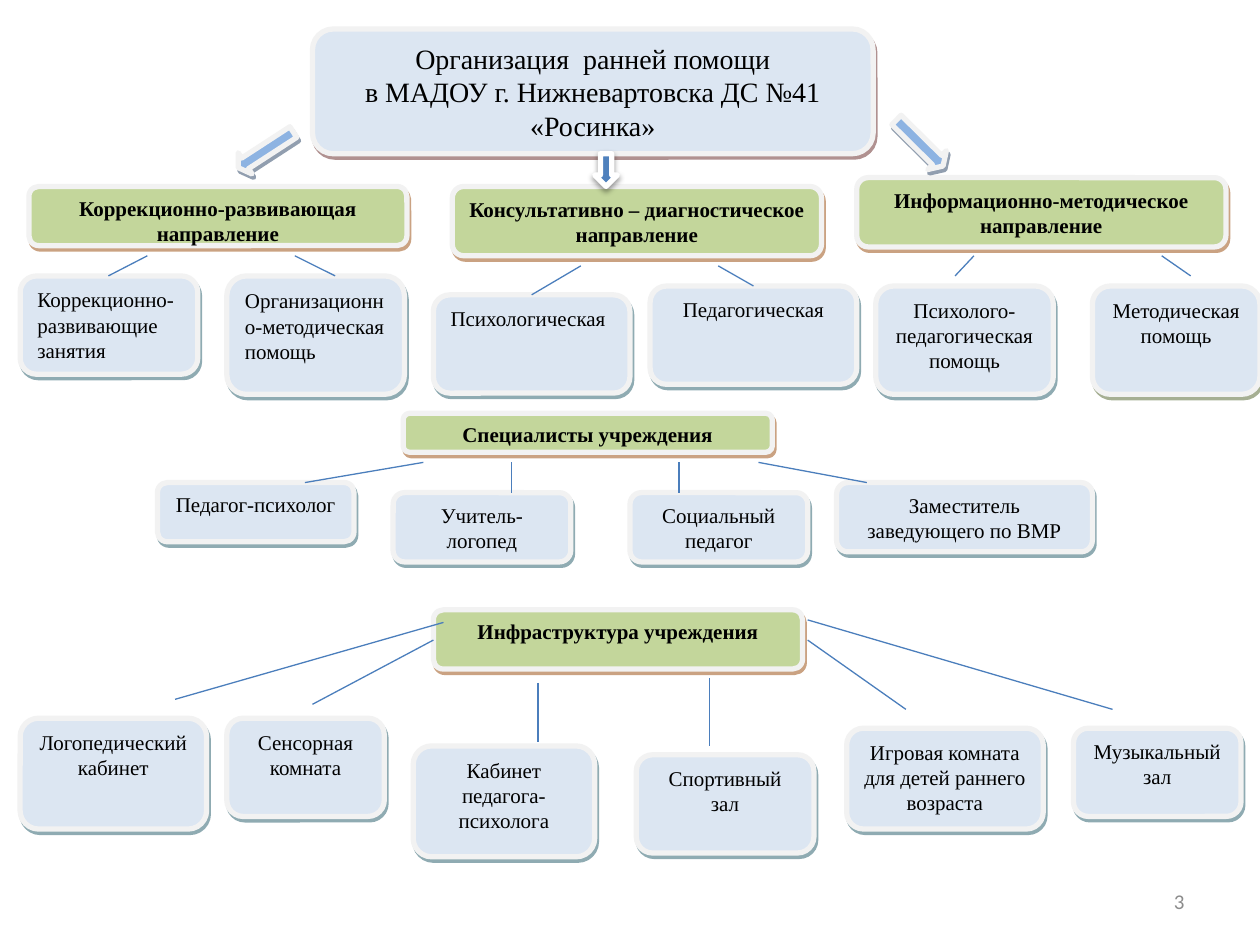
import pptx
import pptx.util
from lxml import etree
from pptx.dml.color import RGBColor
from pptx.enum.shapes import MSO_CONNECTOR, MSO_SHAPE
from pptx.enum.text import MSO_ANCHOR, PP_ALIGN
from pptx.oxml.ns import qn
from pptx.util import Inches, Pt

BLUE = RGBColor(0xDC, 0xE6, 0xF2)
GREEN = RGBColor(0xC3, 0xD6, 0x9B)
ARROW_BLUE = RGBColor(0x8D, 0xB3, 0xE2)
ACCENT = RGBColor(0x4F, 0x81, 0xBD)
LINK = RGBColor(0x4B, 0x7E, 0xBC)
FRAME = RGBColor(0xF2, 0xF2, 0xF2)
WHITE = RGBColor(0xFF, 0xFF, 0xFF)
BLACK = RGBColor(0, 0, 0)
GREY = RGBColor(0x8C, 0x8C, 0x8C)
BROWN_SHADE = RGBColor(0x62, 0x24, 0x23)
ORANGE_SHADE = RGBColor(0x97, 0x47, 0x06)
TEAL_SHADE = RGBColor(0x20, 0x58, 0x67)
OLIVE_SHADE = RGBColor(0x4E, 0x61, 0x28)
NAVY_SHADE = RGBColor(0x24, 0x3F, 0x60)

SERIF = "Times New Roman"
LEFT, CENTER = PP_ALIGN.LEFT, PP_ALIGN.CENTER

# Content: (text, (left, top, width, height)), in inches
TITLE = ("Организация  ранней помощи\nв МАДОУ г. Нижневартовска ДС №41 «Росинка»",
         (2.48, 0.23, 4.45, 0.99))
DIRECTIONS = [
    ("Коррекционно-развивающая направление", (0.23, 1.48, 3, 0.47)),
    ("Консультативно – диагностическое направление", (3.59, 1.48, 2.93, 0.55)),
    ("Информационно-методическое направление", (6.8, 1.41, 2.93, 0.55)),
]
SECTIONS = [
    ("Специалисты учреждения", (3.2, 3.28, 2.93, 0.31)),
    ("Инфраструктура учреждения", (3.44, 4.84, 2.93, 0.47)),
]
LEFT_ALIGNED_HELP = [
    ("Коррекционно-развивающие занятия", (0.16, 2.19, 1.41, 0.78)),
    ("Организационно-методическая помощь", (1.8, 2.19, 1.41, 0.94)),
    ("Психологическая", (3.44, 2.34, 1.56, 0.78)),
]
CENTERED_HELP = [
    ("Педагогическая", (5.16, 2.27, 1.64, 0.78)),
    ("Психолого-педагогическая помощь", (6.95, 2.27, 1.41, 0.86)),
]
METHOD_HELP = ("Методическая помощь", (8.67, 2.27, 1.33, 0.86))
SPECIALISTS = [
    ("Педагог-психолог", (1.25, 3.83, 1.56, 0.47)),
    ("Учитель-логопед", (3.12, 3.91, 1.41, 0.55)),
    ("Социальный педагог", (5, 3.91, 1.41, 0.55)),
    ("Заместитель заведующего по ВМР", (6.64, 3.83, 2.03, 0.55)),
]
ROOMS = [
    ("Логопедический кабинет", (0.16, 5.7, 1.48, 0.88)),
    ("Сенсорная комната", (1.8, 5.7, 1.25, 0.78)),
    ("Кабинет педагога-психолога", (3.28, 5.92, 1.44, 0.88)),
    ("Спортивный зал", (5.05, 5.99, 1.41, 0.78)),
    ("Игровая комната для детей раннего возраста", (6.72, 5.78, 1.56, 0.8)),
    ("Музыкальный зал", (8.52, 5.78, 1.33, 0.7)),
]
# Links: (x, y) of the upper end, then of the lower end
LINKS = [
    # directions to kinds of help
    (1.17, 2.03, 0.86, 2.19), (2.34, 2.03, 2.66, 2.19),
    (4.61, 2.11, 4.22, 2.34), (5.7, 2.11, 5.98, 2.27),
    (7.73, 2.03, 7.58, 2.19), (9.22, 2.03, 9.45, 2.19),
    # specialists
    (3.36, 3.67, 2.42, 3.83), (4.06, 3.67, 4.06, 3.91),
    (5.39, 3.67, 5.39, 3.91), (6.02, 3.67, 6.88, 3.83),
    # rooms
    (3.52, 4.94, 1.39, 5.55), (3.44, 5.08, 2.48, 5.59),
    (4.27, 5.42, 4.27, 5.89), (5.63, 5.38, 5.63, 5.92),
    (6.41, 5.08, 7.19, 5.63), (6.41, 4.92, 8.83, 5.63),
]
SIDE_ARROWS = [((1.85, 1.09, 0.52, 0.2), 327), ((7.04, 1.03, 0.52, 0.21), 224.7)]
DOWN_ARROW = (4.72, 1.22, 0.18, 0.26)


def add_shadow(shape, color, opacity=50, blur=0, distance=2.2, angle=63):
    shape.shadow.inherit = False
    effects = shape._element.spPr.find(qn("a:effectLst"))
    shadow = etree.SubElement(
        effects, qn("a:outerShdw"), blurRad=str(Pt(blur)), dist=str(Pt(distance)),
        dir=str(angle * 60000), algn="ctr", rotWithShape="0")
    rgb = etree.SubElement(shadow, qn("a:srgbClr"), val=str(color))
    etree.SubElement(rgb, qn("a:alpha"), val=str(opacity * 1000))


def add_figure(slide, kind, place, fill, frame=FRAME):
    shape = slide.shapes.add_shape(kind, *map(Inches, place))
    shape.fill.solid()
    shape.fill.fore_color.rgb = fill
    shape.line.color.rgb = frame
    shape.line.width = Pt(3)
    return shape


def write(shape, text, size, font, color, align, bold=False, after=0):
    text_frame = shape.text_frame
    text_frame.word_wrap = True
    text_frame.text = text
    for paragraph in text_frame.paragraphs:
        paragraph.alignment = align
        paragraph.space_after = Pt(after)
        for run in paragraph.runs:
            run.font.size = Pt(size)
            run.font.name = font
            run.font.bold = bold
            run.font.color.rgb = color


def add_box(slide, item, fill=BLUE, shade=TEAL_SHADE, align=CENTER,
            size=12, bold=False, after=10):
    text, place = item
    box = add_figure(slide, MSO_SHAPE.ROUNDED_RECTANGLE, place, fill)
    add_shadow(box, shade)
    box.text_frame.vertical_anchor = MSO_ANCHOR.TOP
    write(box, text, size, SERIF, BLACK, align, bold, after)


def add_link(slide, ends):
    link = slide.shapes.add_connector(MSO_CONNECTOR.STRAIGHT, *map(Inches, ends))
    link.line.color.rgb = LINK
    link.line.width = Pt(0.75)
    etree.SubElement(link._element.spPr, qn("a:effectLst"))


def main():
    presentation = pptx.Presentation()
    presentation.slide_width, presentation.slide_height = Inches(10), Inches(7.5)
    slide = presentation.slides.add_slide(presentation.slide_layouts[6])

    # Title and headings
    add_box(slide, TITLE, shade=BROWN_SHADE, size=16, after=0)
    for items, after in ((DIRECTIONS, 0), (SECTIONS, 10)):
        for item in items:
            add_box(slide, item, GREEN, ORANGE_SHADE, bold=True, after=after)

    # Boxes under the headings
    for item in LEFT_ALIGNED_HELP:
        add_box(slide, item, align=LEFT)
    for item in CENTERED_HELP + SPECIALISTS + ROOMS:
        add_box(slide, item)
    add_box(slide, METHOD_HELP, shade=OLIVE_SHADE, after=0)

    # Links and arrows
    for ends in LINKS:
        add_link(slide, ends)
    for place, rotation in SIDE_ARROWS:
        arrow = add_figure(slide, MSO_SHAPE.LEFT_ARROW, place, ARROW_BLUE)
        arrow.adjustments[1] = 0.32
        arrow.rotation = rotation
        add_shadow(arrow, NAVY_SHADE)
    arrow = add_figure(slide, MSO_SHAPE.DOWN_ARROW, DOWN_ARROW, ACCENT, WHITE)
    add_shadow(arrow, BLACK, opacity=38, blur=3.1, distance=1.6, angle=90)

    # Slide number
    number = slide.shapes.add_textbox(*map(Inches, (7.17, 6.95, 2.33, 0.4)))
    number.text_frame.vertical_anchor = MSO_ANCHOR.MIDDLE
    write(number, "3", 12, "Calibri", GREY, PP_ALIGN.RIGHT)

    presentation.save("out.pptx")


if __name__ == "__main__":
    main()
